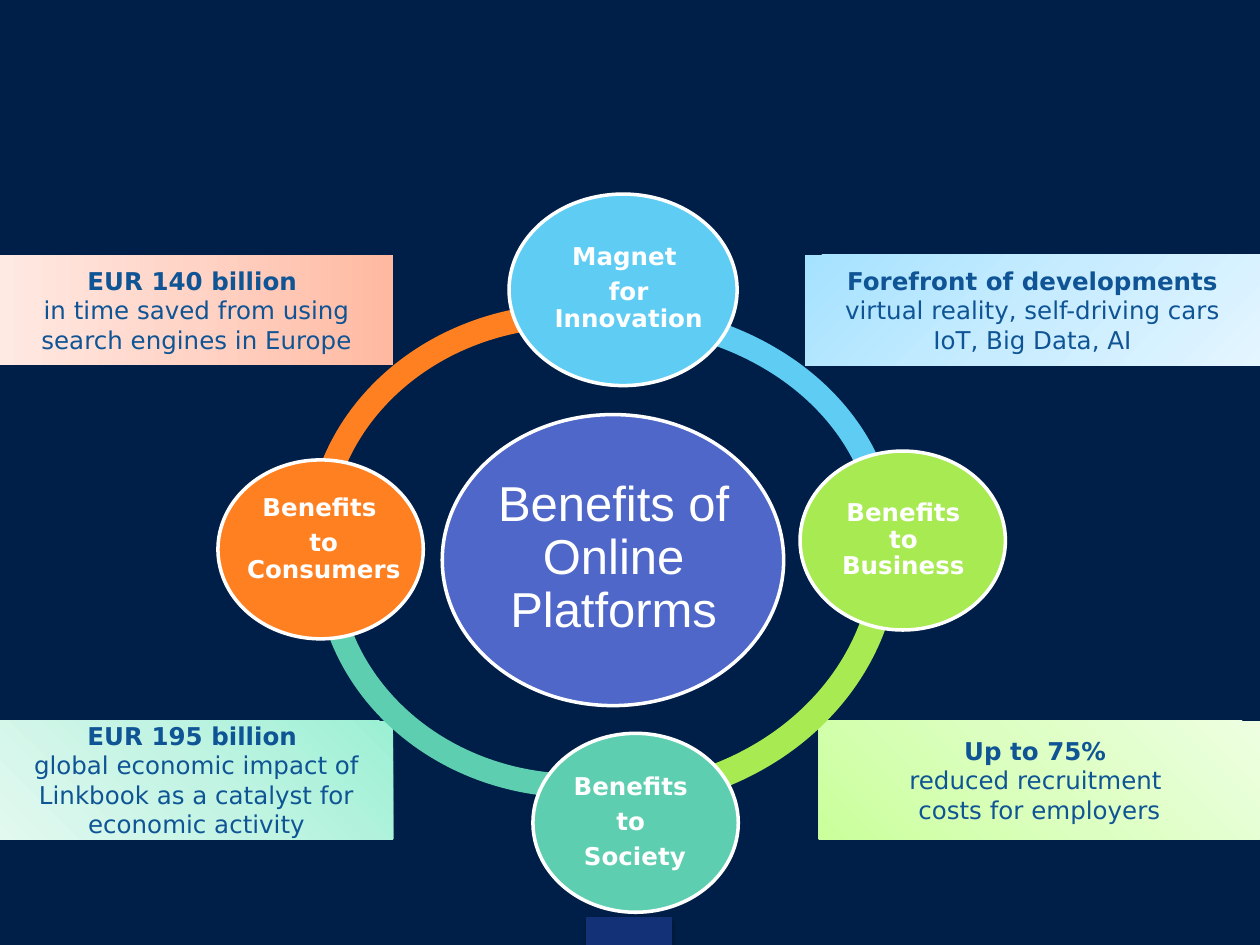
from lxml.etree import SubElement
from pptx import Presentation
from pptx.dml.color import RGBColor
from pptx.enum.shapes import MSO_SHAPE
from pptx.enum.text import MSO_ANCHOR, PP_ALIGN
from pptx.oxml import parse_xml
from pptx.oxml.ns import nsdecls, qn
from pptx.util import Inches, Pt

NAVY = RGBColor(0x00, 0x1F, 0x48)
FOOTER_BLUE = RGBColor(0x13, 0x31, 0x76)
TEXT_BLUE = RGBColor(0x0F, 0x54, 0x94)
WHITE = RGBColor(0xFF, 0xFF, 0xFF)
ORANGE = RGBColor(0xFF, 0x80, 0x21)
TEAL = RGBColor(0x5D, 0xCE, 0xAF)
LIME = RGBColor(0xA7, 0xEA, 0x52)
SKY = RGBColor(0x5E, 0xCC, 0xF3)
INDIGO = RGBColor(0x4E, 0x67, 0xC8)

TEAL_FADE = [RGBColor(0x9C, 0xF0, 0xD4), RGBColor(0xC3, 0xF4, 0xE3), RGBColor(0xE2, 0xF9, 0xF0)]
ORANGE_FADE = [RGBColor(0xFF, 0xB9, 0xA1), RGBColor(0xFF, 0xD3, 0xC6), RGBColor(0xFF, 0xE9, 0xE3)]
LIME_FADE = [RGBColor(0xCA, 0xFF, 0x9B), RGBColor(0xDC, 0xFF, 0xC1), RGBColor(0xED, 0xFF, 0xE0)]
SKY_FADE = [RGBColor(0xA5, 0xE2, 0xFF), RGBColor(0xC7, 0xEC, 0xFF), RGBColor(0xE3, 0xF5, 0xFF)]

LABEL_FONT, HUB_FONT = "DejaVu Sans", "Arial"
LABEL_SIZE, HUB_SIZE = 14, 28

FROM_BOTTOM_LEFT = '<a:path path="circle"><a:fillToRect t="100000" r="100000"/></a:path>'


def toward(degrees):
    return f'<a:lin ang="{degrees * 60000}" scaled="0"/>'


FACTS = [
    ((0, 5.72, 3.12, 0.94), TEAL_FADE, toward(135),
     ["EUR 195 billion ",
      "global economic impact of Linkbook as a catalyst for economic activity"]),
    ((0, 2.02, 3.12, 0.88), ORANGE_FADE, toward(180),
     ["EUR 140 billion ", "in time saved from using search engines in Europe"]),
    ((6.5, 5.72, 3.5, 0.94), LIME_FADE, FROM_BOTTOM_LEFT,
     ["Up to 75% ", "reduced recruitment ", "costs for employers"]),
    ((6.39, 2.02, 3.61, 0.88), SKY_FADE, toward(45),
     ["Forefront of developments", "virtual reality, self-driving cars", "IoT, Big Data, AI"]),
]

ARC_WIDTH = 0.05
ARCS = [
    ((2.43, 2.41, 4.21, 3.79), 108, 162, ORANGE),
    ((2.5, 2.56, 4.15, 3.77), 54, 108, TEAL),
    ((2.47, 2.28, 4.67, 4.15), 0, 54, LIME),
    ((2.54, 2.41, 4.58, 3.79), 162, 0, SKY),
]

BENEFITS = [
    ((6.35, 3.58, 1.63, 1.42), (6.59, 3.79, 1.16, 1), LIME, ["Benefits to Business"]),
    ((1.73, 3.65, 1.63, 1.42), (1.86, 3.78, 1.42, 1), ORANGE, ["Benefits ", "to Consumers"]),
    ((3.51, 3.29, 2.71, 2.31), (3.91, 3.62, 1.92, 1.63), INDIGO, ["Benefits of Online Platforms"]),
    ((4.04, 1.54, 1.81, 1.52), (4.31, 1.64, 1.36, 1.3), SKY, ["Magnet ", "for Innovation"]),
    ((4.23, 5.82, 1.63, 1.42), (4.31, 6.03, 1.46, 1), TEAL, ["Benefits ", "to ", "Society"]),
]


def place(shapes, preset, box, color=None, outline=None, width=2):
    shape = shapes.add_shape(preset, *map(Inches, box))
    shape.shadow.inherit = False
    if color is not None:
        shape.fill.solid()
        shape.fill.fore_color.rgb = color
    if outline is None:
        shape.line.fill.background()
    else:
        shape.line.color.rgb = outline
        shape.line.width = Pt(width)
    return shape


def fade(shape, colors, direction):
    stops = "".join(
        f'<a:gs pos="{index * 50000}"><a:srgbClr val="{color}"/></a:gs>'
        for index, color in enumerate(colors))
    gradient = parse_xml(
        f'<a:gradFill {nsdecls("a")}><a:gsLst>{stops}</a:gsLst>{direction}</a:gradFill>')
    shape.element.spPr.find(qn("a:prstGeom")).addnext(gradient)


def write(frame, lines, font, size, color, bold_lines):
    frame.word_wrap = True
    frame.vertical_anchor = MSO_ANCHOR.MIDDLE
    for index, line in enumerate(lines):
        paragraph = frame.paragraphs[0] if index == 0 else frame.add_paragraph()
        paragraph.alignment = PP_ALIGN.CENTER
        run = paragraph.add_run()
        run.text = line
        run.font.name = font
        run.font.size = Pt(size)
        run.font.bold = index < bold_lines
        run.font.color.rgb = color


def add_benefit(slide, circle, label, color, lines):
    group = slide.shapes.add_group_shape()
    place(group.shapes, MSO_SHAPE.OVAL, circle, color, WHITE)
    frame = group.shapes.add_textbox(*map(Inches, label)).text_frame
    is_hub = color == INDIGO
    margin = Inches(0.04 if is_hub else 0.02)
    frame.margin_left = frame.margin_right = margin
    frame.margin_top = frame.margin_bottom = margin
    font, size = (HUB_FONT, HUB_SIZE) if is_hub else (LABEL_FONT, LABEL_SIZE)
    write(frame, lines, font, size, WHITE, 0 if is_hub else len(lines))
    for paragraph in frame.paragraphs:
        paragraph.line_spacing = 0.9
        paragraph.space_after = Pt(round(size * 0.35))


def add_footer_tab(slide):
    tab = place(slide.shapes, MSO_SHAPE.RECTANGLE, (4.66, 7.28, 0.67, 0.22),
                FOOTER_BLUE, FOOTER_BLUE, 0.75)
    effects = tab.element.spPr.find(qn("a:effectLst"))
    shadow = SubElement(effects, qn("a:outerShdw"), blurRad=str(Pt(3.1)),
                        dist=str(Pt(1.8)), dir="5400000", rotWithShape="0")
    black = SubElement(shadow, qn("a:srgbClr"), val="000000")
    SubElement(black, qn("a:alpha"), val="35000")


def main():
    deck = Presentation()
    deck.slide_width, deck.slide_height = Inches(10), Inches(7.5)
    slide = deck.slides.add_slide(deck.slide_layouts[6])
    slide.background.fill.solid()
    slide.background.fill.fore_color.rgb = NAVY

    add_footer_tab(slide)
    for box, colors, direction, lines in FACTS:
        panel = place(slide.shapes, MSO_SHAPE.RECTANGLE, box)
        fade(panel, colors, direction)
        write(panel.text_frame, lines, LABEL_FONT, LABEL_SIZE, TEXT_BLUE, 1)
    for box, start, end, color in ARCS:
        arc = place(slide.shapes, MSO_SHAPE.BLOCK_ARC, box, color)
        for index, value in enumerate((start, end, ARC_WIDTH)):
            arc.adjustments[index] = value
    for benefit in BENEFITS:
        add_benefit(slide, *benefit)
    deck.save("out.pptx")


if __name__ == "__main__":
    main()
